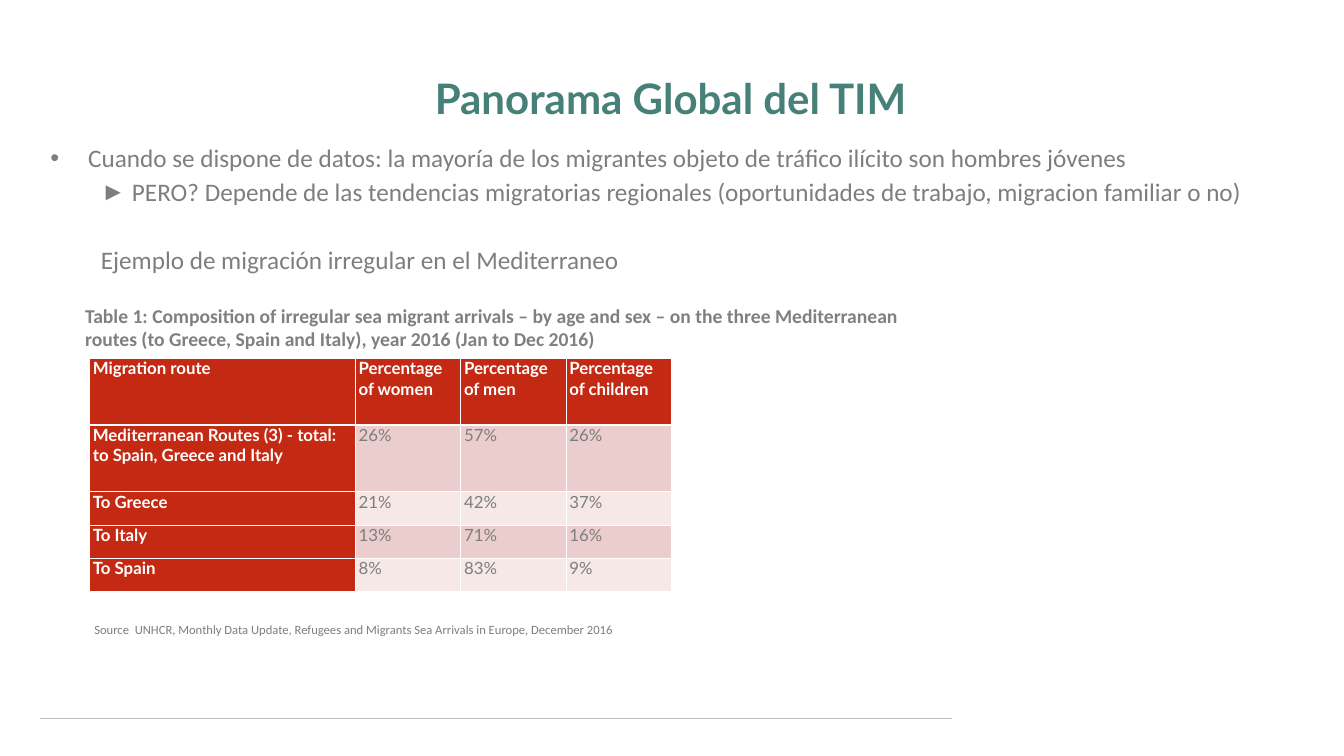
from lxml.etree import SubElement
from pptx import Presentation
from pptx.dml.color import RGBColor
from pptx.enum.shapes import MSO_CONNECTOR
from pptx.enum.text import MSO_ANCHOR, MSO_AUTO_SIZE, PP_ALIGN
from pptx.oxml.ns import qn
from pptx.util import Cm, Pt

COLORS = {
    "title": "468078", "text": "7E7E7E", "caption": "808080", "rule": "BFBFBF",
    "head": "C42A13", "band": "EACDCC", "light": "F5E8E7", "white": "FFFFFF",
}

# text, level, left margin, indent (cm), space before (pt), bullet
POINTS = [
    ("Cuando se dispone de datos: la mayoría de los migrantes objeto de tráfico "
     "ilícito son hombres jóvenes", 0, 1.9, -1.9, 0, "•"),
    ("PERO? Depende de las tendencias migratorias regionales (oportunidades de "
     "trabajo, migracion familiar o no)", 1, 4.11, -1.57, 10, "►"),
    ("Ejemplo de migración irregular en el Mediterraneo", 1, 2.54, 0, 58.5, None),
]

ROUTES = [
    ("Migration route", "Percentage of women", "Percentage of men",
     "Percentage of children"),
    ("Mediterranean Routes (3) - total: to Spain, Greece and Italy",
     "26%", "57%", "26%"),
    ("To Greece", "21%", "42%", "37%"),
    ("To Italy", "13%", "71%", "16%"),
    ("To Spain", "8%", "83%", "9%"),
]
COL_SHARES = [13.39, 5.31, 5.31, 5.31]
ROW_SHARES = [2, 2, 1, 1, 1]


def rgb(name):
    return RGBColor.from_string(COLORS[name])


def add_run(p, text, size, color, font="Calibri", bold=False):
    r = p.add_run()
    r.text = text
    r.font.name, r.font.size, r.font.bold = font, Pt(size), bold
    r.font.color.rgb = rgb(color)


def place(sp, box):
    sp.left, sp.top, sp.width, sp.height = (Cm(v) for v in box)


def set_frame(tf, anchor, inset_x, inset_y, auto_size=MSO_AUTO_SIZE.NONE):
    tf.word_wrap = True
    tf.auto_size = auto_size
    tf.vertical_anchor = anchor
    tf.margin_left = tf.margin_right = Cm(inset_x)
    tf.margin_top = tf.margin_bottom = Cm(inset_y)


def set_bullet(p, left, indent, char):
    pPr = p._p.get_or_add_pPr()
    pPr.set("marL", str(Cm(left)))
    pPr.set("indent", str(Cm(indent)))
    if char:
        SubElement(pPr, qn("a:buFont"), typeface="Arial")
        SubElement(pPr, qn("a:buChar"), char=char)
    else:
        SubElement(pPr, qn("a:buNone"))


def set_borders(cell, **widths):
    tcPr = cell._tc.get_or_add_tcPr()
    for side in "LRTB":
        ln = SubElement(tcPr, qn(f"a:ln{side}"), w=str(Pt(widths.get(side, 1))))
        fill = SubElement(ln, qn("a:solidFill"))
        SubElement(fill, qn("a:srgbClr"), val=COLORS["white"])


def add_title(s, box):
    sp = s.shapes.title
    place(sp, box)
    set_frame(sp.text_frame, MSO_ANCHOR.MIDDLE, 0.51, 0.25)
    p = sp.text_frame.paragraphs[0]
    p.alignment, p.line_spacing = PP_ALIGN.CENTER, 0.9
    add_run(p, "Panorama Global del TIM", 60, "title", "Lato", True)


def add_points(s, box):
    sp = s.placeholders[1]
    place(sp, box)
    tf = sp.text_frame
    set_frame(tf, MSO_ANCHOR.TOP, 0.51, 0.25)
    for i, (text, level, left, indent, before, char) in enumerate(POINTS):
        p = tf.add_paragraph() if i else tf.paragraphs[0]
        p.level = level
        set_bullet(p, left, indent, char)
        p.alignment, p.line_spacing = PP_ALIGN.LEFT, 0.9
        p.space_before = Pt(before)
        add_run(p, text, 36, "text")


def add_note(s, box, text, size, color, bold=False, anchor=MSO_ANCHOR.TOP):
    tf = s.shapes.add_textbox(*(Cm(v) for v in box)).text_frame
    set_frame(tf, anchor, 0.25, 0.13, MSO_AUTO_SIZE.SHAPE_TO_FIT_TEXT)
    add_run(tf.paragraphs[0], text, size, color, bold=bold)


def add_routes_table(s, box):
    table = s.shapes.add_table(len(ROUTES), len(COL_SHARES),
                               *(Cm(v) for v in box)).table
    for col, share in zip(table.columns, COL_SHARES):
        col.width = Cm(box[2] * share / sum(COL_SHARES))
    for row, share in zip(table.rows, ROW_SHARES):
        row.height = Cm(box[3] * share / sum(ROW_SHARES))

    for i, values in enumerate(ROUTES):
        for j, text in enumerate(values):
            cell = table.cell(i, j)
            is_head = i == 0 or j == 0
            set_borders(cell, T=3 if i == 1 else 1, B=3 if i == 0 else 1)
            cell.fill.solid()
            cell.fill.fore_color.rgb = rgb(
                "head" if is_head else "band" if i % 2 else "light")
            cell.margin_left = cell.margin_right = Cm(0.18)
            cell.margin_top = cell.margin_bottom = 0
            p = cell.text_frame.paragraphs[0]
            p.space_after = Pt(6)
            add_run(p, text, 24, "white" if is_head else "text", "Lato", is_head)


def add_footer_rule(s, left, top, width):
    line = s.shapes.add_connector(MSO_CONNECTOR.STRAIGHT, Cm(left), Cm(top),
                                  Cm(left + width), Cm(top))
    line.line.color.rgb = rgb("rule")
    line.line.width = Pt(2.25)
    SubElement(line._element.spPr, qn("a:effectLst"))


def main():
    prs = Presentation()
    prs.slide_width, prs.slide_height = Cm(67.72), Cm(38.1)
    s = prs.slides.add_slide(prs.slide_layouts[1])

    # Footer rule, title and list
    add_footer_rule(s, 2.03, 36.2, 45.92)
    add_title(s, (2.03, 1.4, 63.53, 7.37))
    add_points(s, (2.03, 7.09, 63.53, 28.24))

    # Table with its caption and source
    add_routes_table(s, (4.5, 18.06, 29.32, 11.76))
    add_note(s, (4.04, 15.16, 42.34, 2.64),
             "Table 1: Composition of irregular sea migrant arrivals – by age and "
             "sex – on the three Mediterranean routes (to Greece, Spain and Italy), "
             "year 2016 (Jan to Dec 2016)", 28, "caption", True, MSO_ANCHOR.MIDDLE)
    add_note(s, (4.5, 31.22, 44.93, 1.02),
             "Source  UNHCR, Monthly Data Update, Refugees and Migrants Sea Arrivals "
             "in Europe, December 2016", 18, "text")
    prs.save("out.pptx")


if __name__ == "__main__":
    main()
